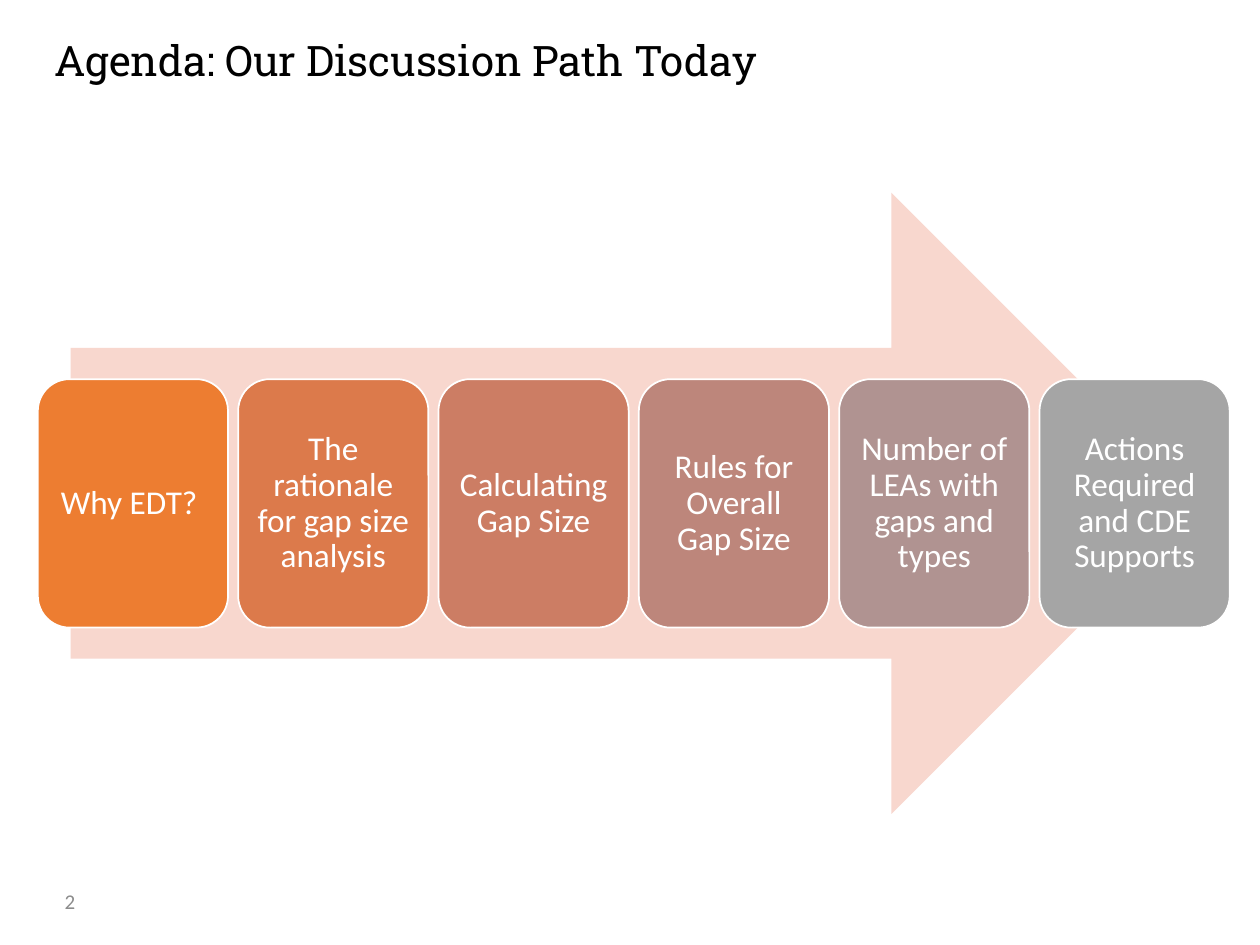
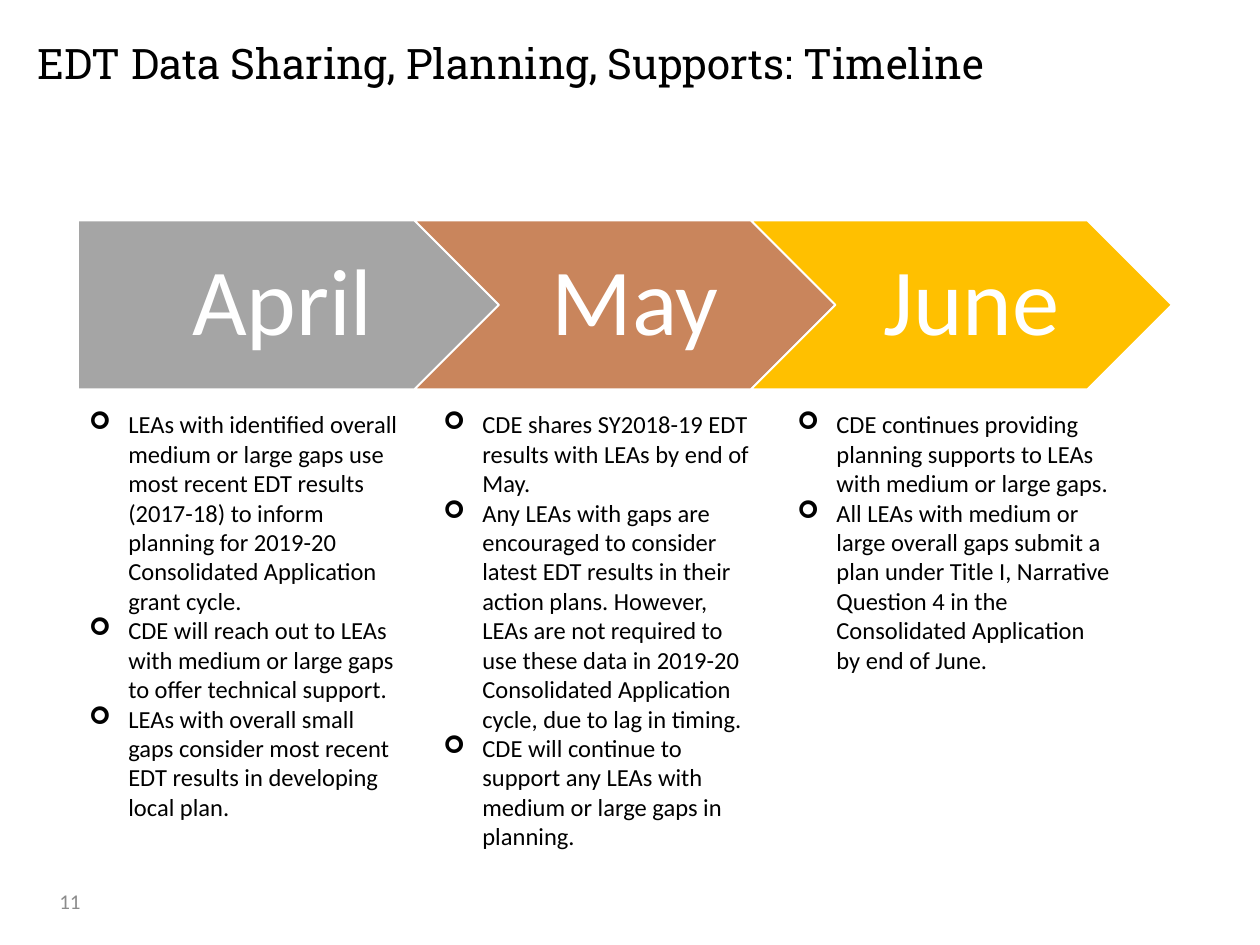
from dataclasses import dataclass

from lxml import etree
from pptx import Presentation
from pptx.dml.color import RGBColor
from pptx.enum.shapes import MSO_SHAPE as Shape
from pptx.enum.text import MSO_ANCHOR as Anchor, PP_ALIGN as Align
from pptx.oxml.ns import qn
from pptx.util import Inches, Pt


@dataclass(frozen=True)
class Theme:
    title_font: str = "Roboto Slab"
    body_font: str = "Calibri"
    title_size: int = 24
    step_size: int = 19
    month_size: int = 54
    body_size: int = 14
    number_size: int = 12
    black: str = "000000"
    white: str = "FFFFFF"
    number_grey: str = "8C8C8C"
    path_arrow: str = "F8D7CE"


THEME = Theme()

AGENDA_STEPS = [
    ("Why EDT? ", "ED7D31"),
    ("The rationale for gap size analysis", "DC7A4B"),
    ("Calculating Gap Size", "CC7D64"),
    ("Rules for Overall Gap Size", "BD867B"),
    ("Number of LEAs with gaps and types", "B09391"),
    ("Actions Required and CDE Supports", "A5A5A5"),
]

MONTHS = [
    ("April", "A5A5A5", [
        "LEAs with identified overall medium or large gaps use most recent EDT results "
        "(2017-18) to inform planning for 2019-20 Consolidated Application grant cycle.",
        "CDE will reach out to LEAs with medium or large gaps to offer technical support.",
        "LEAs with overall small gaps consider most recent EDT results in developing local plan.",
    ]),
    ("May", "C9855C", [
        "CDE shares SY2018-19 EDT results with LEAs by end of May.",
        "Any LEAs with gaps are encouraged to consider latest EDT results in their action "
        "plans. However, LEAs are not required to use these data in 2019-20 Consolidated "
        "Application cycle, due to lag in timing.",
        "CDE will continue to support any LEAs with medium or large gaps in planning.",
    ]),
    ("June", "FFC000", [
        "CDE continues providing planning supports to LEAs with medium or large gaps.",
        "All LEAs with medium or large overall gaps submit a plan under Title I, Narrative "
        "Question 4 in the Consolidated Application by end of June.",
    ]),
]


def add_bullet(paragraph, symbol, indent):
    properties = paragraph._p.get_or_add_pPr()
    properties.set("marL", str(Inches(indent)))
    properties.set("indent", str(-Inches(indent)))
    etree.SubElement(properties, qn("a:buFont")).set("typeface", "Wingdings")
    etree.SubElement(properties, qn("a:buChar")).set("char", symbol)


def write_text(shape, texts, size, color=THEME.black, font=THEME.body_font, align=Align.LEFT,
               anchor=Anchor.TOP, margins=(0.1, 0.05, 0.1, 0.05), spacing=None, bullet=None):
    frame = shape.text_frame
    frame.word_wrap = True
    frame.vertical_anchor = anchor
    (frame.margin_left, frame.margin_top,
     frame.margin_right, frame.margin_bottom) = map(Inches, margins)
    for index, text in enumerate(texts):
        paragraph = frame.add_paragraph() if index else frame.paragraphs[0]
        paragraph.alignment = align
        if spacing:
            paragraph.line_spacing = spacing
        if bullet:
            add_bullet(paragraph, bullet, 0.31)
        run = paragraph.add_run()
        run.text = text
        run.font.size = Pt(size)
        run.font.name = font
        run.font.color.rgb = RGBColor.from_string(color)


def add_text(slide, box, texts, **text_format):
    write_text(slide.shapes.add_textbox(*map(Inches, box)), texts, **text_format)


def add_block(slide, kind, box, fill, line=None):
    shape = slide.shapes.add_shape(kind, *map(Inches, box))
    shape.shadow.inherit = False
    shape.fill.solid()
    shape.fill.fore_color.rgb = RGBColor.from_string(fill)
    if line:
        shape.line.color.rgb = RGBColor.from_string(line)
        shape.line.width = Pt(1)
    else:
        shape.line.fill.background()
    return shape


def add_base_slide(presentation, title, title_box, number):
    """Blank slide with the shared title style and slide number."""
    slide = presentation.slides.add_slide(presentation.slide_layouts[6])
    add_text(slide, title_box, [title], size=THEME.title_size, font=THEME.title_font,
             margins=(0, 0, 0, 0))
    add_text(slide, (0.3, 6.95, 0.51, 0.4), [str(number)], size=THEME.number_size,
             color=THEME.number_grey, align=Align.CENTER, anchor=Anchor.MIDDLE)
    return slide


def add_agenda_path(slide, box):
    """Wide arrow with evenly spaced step cards across it."""
    left, top, width, height = box
    add_block(slide, Shape.RIGHT_ARROW, (left + 0.26, top, width - 0.48, height),
              THEME.path_arrow)
    gap = 0.08
    card_width = (width + gap) / len(AGENDA_STEPS) - gap
    card_height = height * 0.4
    card_top = top + (height - card_height) / 2
    for index, (text, color) in enumerate(AGENDA_STEPS):
        card_left = left + index * (card_width + gap)
        card = add_block(slide, Shape.ROUNDED_RECTANGLE,
                         (card_left, card_top, card_width, card_height), color, THEME.white)
        write_text(card, [text], size=THEME.step_size, color=THEME.white, align=Align.CENTER,
                   anchor=Anchor.MIDDLE, margins=(0.08,) * 4, spacing=0.9)


def add_month_band(slide, box):
    """Interlocking month arrows; each overlaps the next by a fifth."""
    left, top, width, height = box
    arrow_width = width / (1 + 0.8 * (len(MONTHS) - 1))
    for index, (month, color, _) in enumerate(MONTHS):
        kind = Shape.CHEVRON if index else Shape.PENTAGON
        arrow = add_block(slide, kind, (left + index * 0.8 * arrow_width, top, arrow_width, height),
                          color, THEME.white)
        write_text(arrow, [month], size=THEME.month_size, color=THEME.white, align=Align.CENTER,
                   anchor=Anchor.MIDDLE, spacing=0.9,
                   margins=(0.24 if index else 0.32, 0.16, 0.08, 0.16))


def add_month_notes(slide, box):
    """One bulleted column for each month."""
    left, top, width, height = box
    column_gap = 0.13
    column_width = (width + column_gap) / len(MONTHS) - column_gap
    for index, (_, _, notes) in enumerate(MONTHS):
        column_left = left + index * (column_width + column_gap)
        add_text(slide, (column_left, top, column_width, height), notes,
                 size=THEME.body_size, bullet="➢")


def build_agenda(presentation):
    slide = add_base_slide(presentation, "Agenda: Our Discussion Path Today",
                           (0.43, 0.27, 9.57, 0.78), 2)
    add_agenda_path(slide, (0.3, 1.53, 9.46, 4.93))


def build_timeline(presentation):
    slide = add_base_slide(presentation, "EDT Data Sharing, Planning, Supports: Timeline",
                           (0.3, 0.3, 9.32, 0.78), 11)
    add_month_band(slide, (0.62, 1.75, 8.68, 1.34))
    add_month_notes(slide, (0.61, 3.2, 8.3, 3.64))


def main():
    presentation = Presentation()
    presentation.slide_width = Inches(10)
    presentation.slide_height = Inches(7.5)
    build_agenda(presentation)
    build_timeline(presentation)
    presentation.save("out.pptx")


if __name__ == "__main__":
    main()
